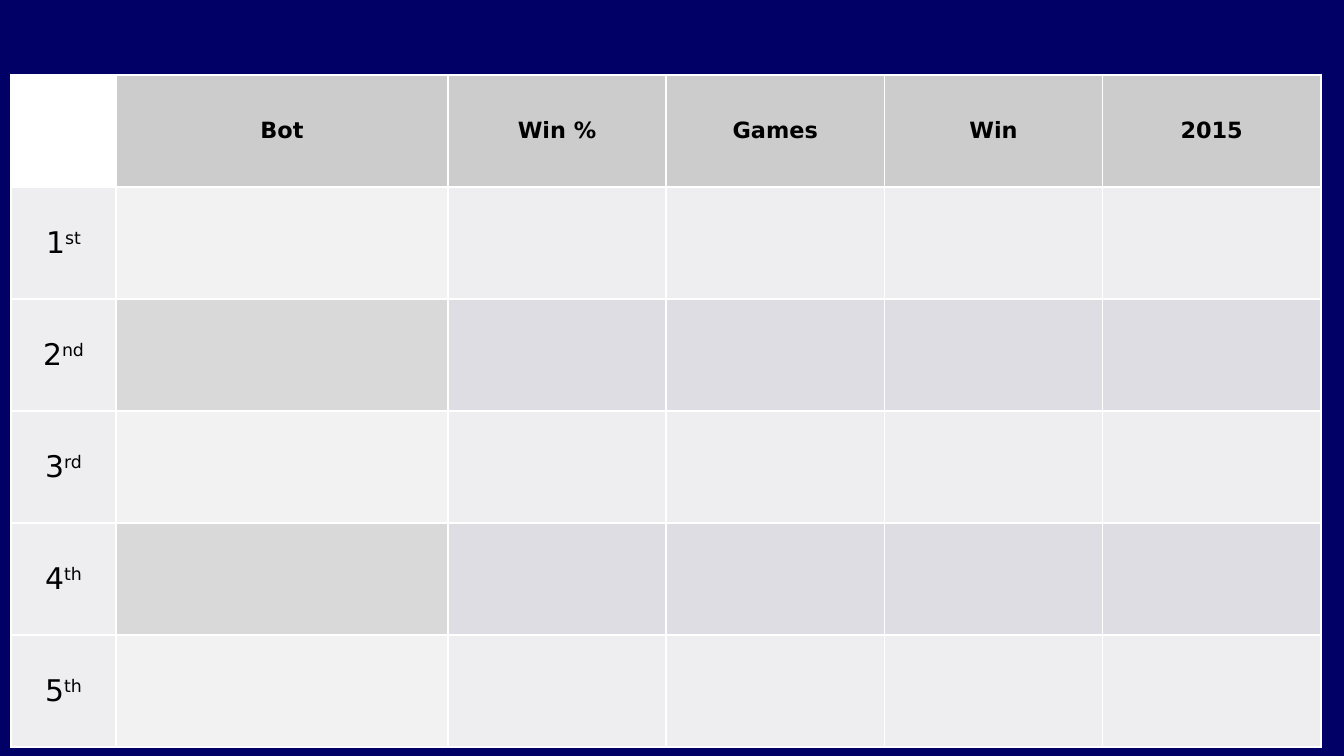
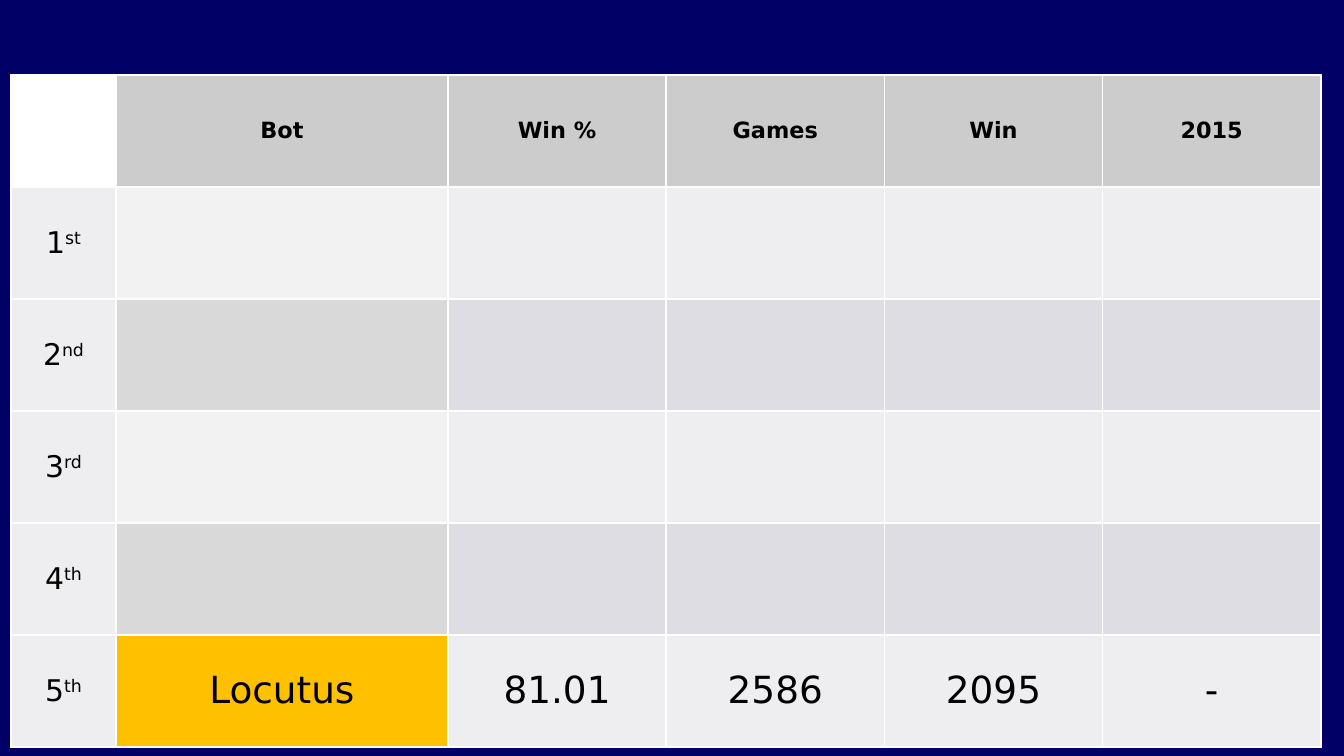
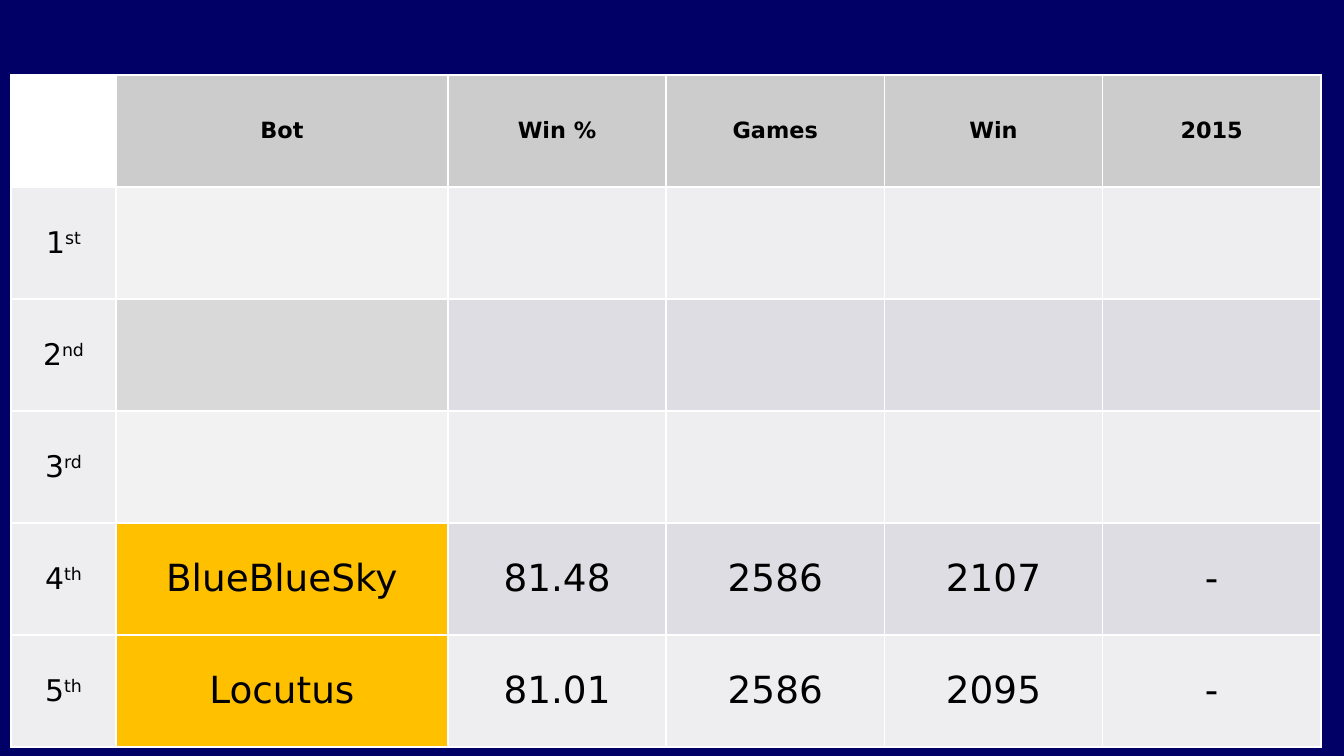
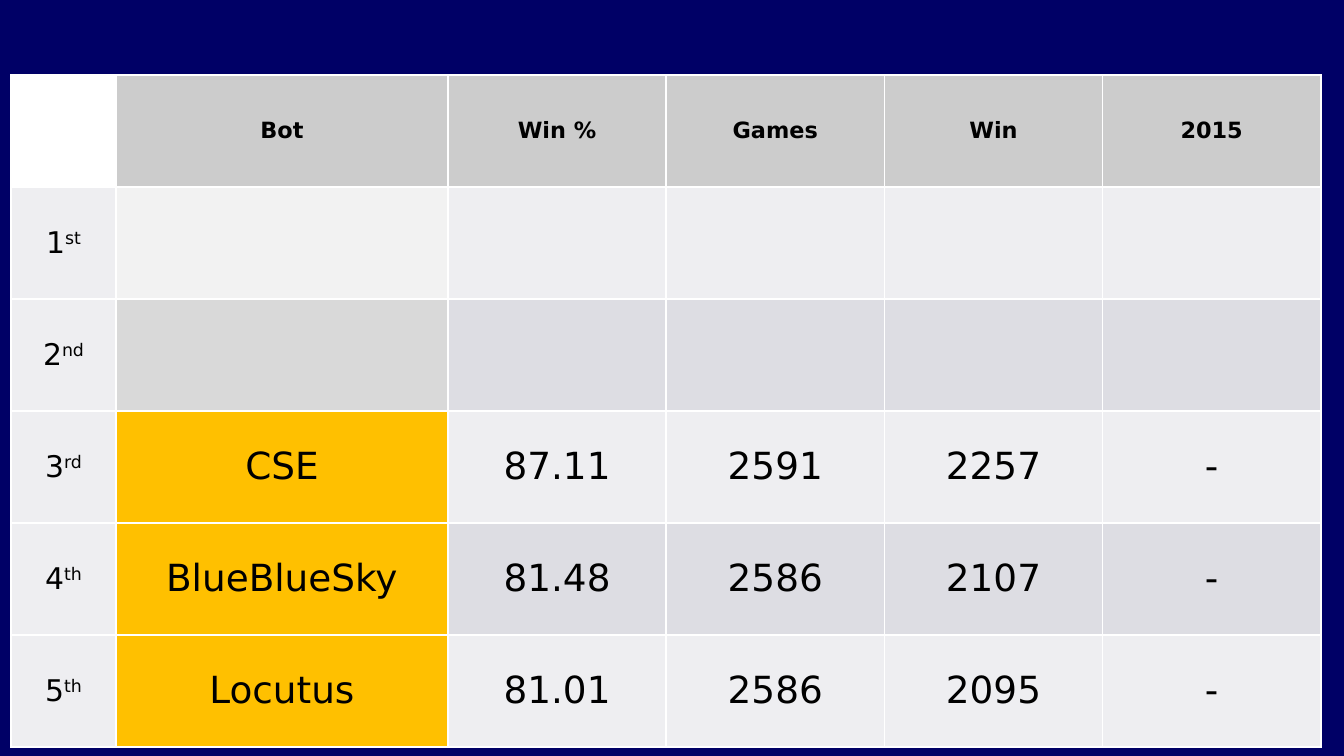
from dataclasses import dataclass

from pptx import Presentation
from pptx import util as u
from pptx.dml.color import RGBColor
from pptx.enum import text
from pptx.oxml import parse_xml
from pptx.oxml.ns import nsdecls

SCALE = 914400 / 134.4


@dataclass(frozen=True)
class Theme:
    font: str = "DejaVu Sans"
    ink: str = "000000"
    backdrop: str = "000066"
    border: str = "FFFFFF"
    corner: str = "FFFFFF"
    header: str = "CCCCCC"
    rank: str = "EEEEF1"
    hidden_bot: tuple = ("F2F2F2", "D9D9D9")
    shown_bot: str = "FFC000"
    score: tuple = ("EEEEF1", "DDDDE3")
    header_size: int = 12
    rank_size: int = 16
    result_size: int = 20
    superscript: int = 30000


HEADERS = ["", "Bot", "Win %", "Games", "Win", "2015"]
RANKS = [("1", "st"), ("2", "nd"), ("3", "rd"), ("4", "th"), ("5", "th")]
RESULTS = {
    3: ["CSE", "87.11", "2591", "2257", "-"],
    4: ["BlueBlueSky", "81.48", "2586", "2107", "-"],
    5: ["Locutus", "81.01", "2586", "2095", "-"],
}
FIRST_SHOWN = [6, 5, 4, 3]


def px(length):
    return u.Emu(round(length * SCALE))


class Standings:
    def __init__(self, theme):
        self.theme = theme
        self.deck = Presentation()
        self.deck.slide_width, self.deck.slide_height = px(1344), px(756)
        backdrop = self.deck.slide_master.background.fill
        backdrop.solid()
        backdrop.fore_color.rgb = RGBColor.from_string(theme.backdrop)
        self.page = None

    def new_page(self):
        self.page = self.deck.slides.add_slide(self.deck.slide_layouts[6])

    def style_cell(self, cell, color):
        properties = cell._tc.get_or_add_tcPr()
        for side in ("lnL", "lnR", "lnT", "lnB"):
            properties.append(parse_xml(
                f'<a:{side} {nsdecls("a")} w="12700"><a:solidFill>'
                f'<a:srgbClr val="{self.theme.border}"/></a:solidFill></a:{side}>'))
        cell.fill.solid()
        cell.fill.fore_color.rgb = RGBColor.from_string(color)
        cell.margin_left = cell.margin_right = 0
        cell.margin_top = cell.margin_bottom = 0
        cell.vertical_anchor = text.MSO_ANCHOR.MIDDLE

    def write_cell(self, cell, words, size, bold=False, suffix=""):
        para = cell.text_frame.paragraphs[0]
        para.alignment = text.PP_ALIGN.CENTER
        para.font.name = self.theme.font
        para.font.size = u.Pt(size)
        para.font.bold = bold
        para.font.color.rgb = RGBColor.from_string(self.theme.ink)
        if words:
            para.add_run().text = words
        if suffix:
            span = para.add_run()
            span.text = suffix
            span.font._element.set("baseline", str(self.theme.superscript))

    def add_standings(self, first_shown):
        theme = self.theme
        left, top, width, row_height = 11, 75, 1310, 112
        rank_width, bot_width = 105, 332
        row_count = len(RANKS) + 1
        table = self.page.shapes.add_table(
            row_count, len(HEADERS), px(left), px(top),
            px(width), px(row_height * row_count)).table
        score_width = (width - rank_width - bot_width) / (len(HEADERS) - 2)
        widths = [rank_width, bot_width] + [score_width] * (len(HEADERS) - 2)
        for column, column_width in zip(table.columns, widths):
            column.width = px(column_width)
        for row in table.rows:
            row.height = px(row_height)

        for column, heading in enumerate(HEADERS):
            cell = table.cell(0, column)
            self.style_cell(cell, theme.header if heading else theme.corner)
            self.write_cell(cell, heading, theme.header_size, bold=True)

        for place, (number, suffix) in enumerate(RANKS, 1):
            cell = table.cell(place, 0)
            self.style_cell(cell, theme.rank)
            self.write_cell(cell, number, theme.rank_size, suffix=suffix)
            shown = place >= first_shown
            band = (place - 1) % 2
            bot_color = theme.shown_bot if shown else theme.hidden_bot[band]
            values = RESULTS[place] if shown else [""] * (len(HEADERS) - 1)
            for column, value in enumerate(values, 1):
                cell = table.cell(place, column)
                self.style_cell(cell, bot_color if column == 1 else theme.score[band])
                self.write_cell(cell, value, theme.result_size)


def main():
    standings = Standings(Theme())
    for first_shown in FIRST_SHOWN:
        standings.new_page()
        standings.add_standings(first_shown)
    standings.deck.save("out.pptx")


if __name__ == "__main__":
    main()
